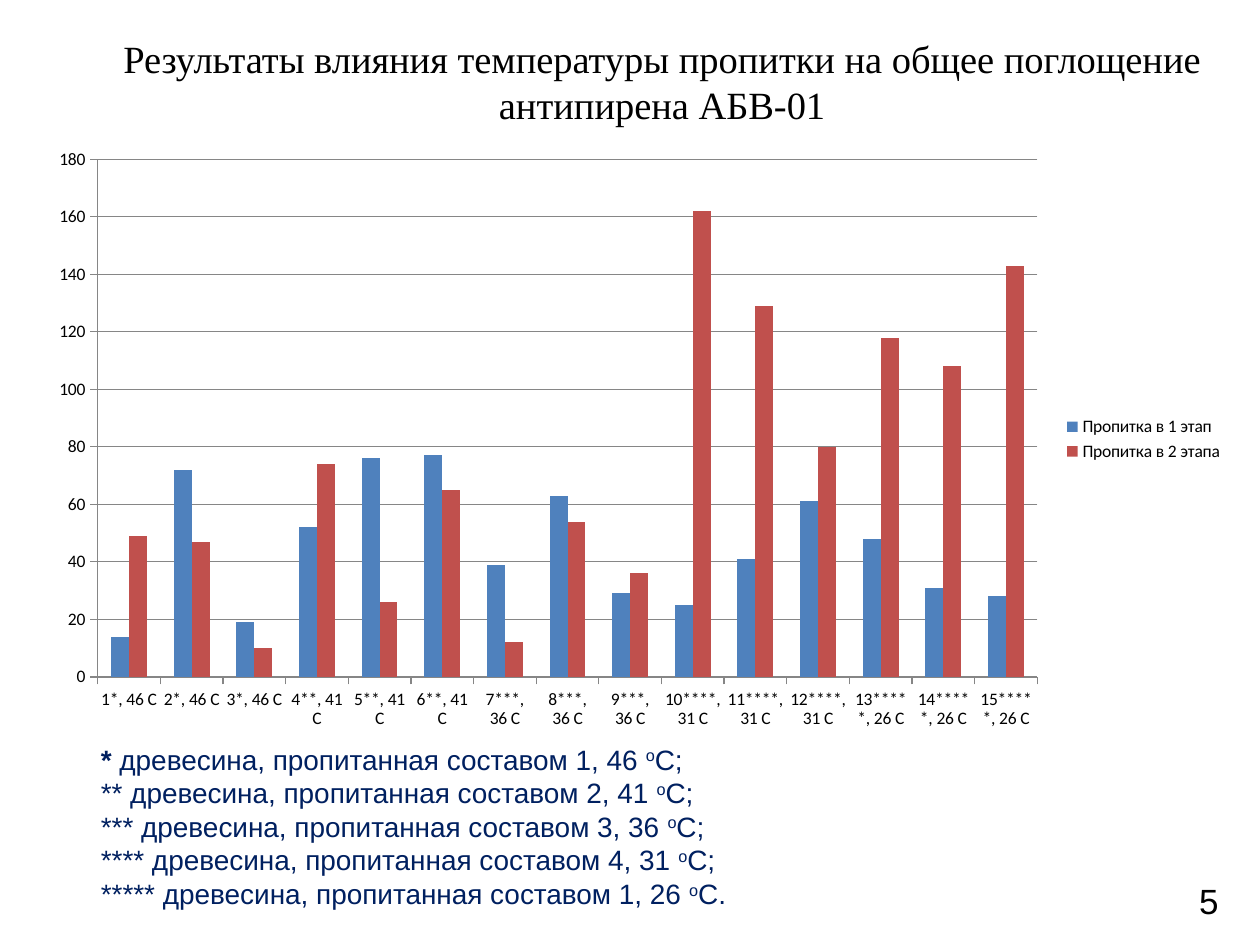
import pptx
import pptx.chart.data
import pptx.dml.color
import pptx.enum.chart
import pptx.enum.text
import pptx.oxml
import pptx.oxml.ns
import pptx.util

Inches, Pt = pptx.util.Inches, pptx.util.Pt
RGBColor = pptx.dml.color.RGBColor
PP_ALIGN = pptx.enum.text.PP_ALIGN
MSO_ANCHOR = pptx.enum.text.MSO_ANCHOR
XL = pptx.enum.chart

BLACK = RGBColor(0x00, 0x00, 0x00)
NAVY = RGBColor(0x00, 0x20, 0x60)
BLUE = RGBColor(0x4F, 0x81, 0xBD)
RED = RGBColor(0xC0, 0x50, 0x4D)
GREY = RGBColor(0x86, 0x86, 0x86)

TITLE = "Результаты влияния температуры пропитки на общее поглощение антипирена АБВ-01"
TEMPERATURES = [46, 41, 36, 31, 26]
COMPOSITIONS = [1, 2, 3, 4, 1]
SAMPLES_PER_GROUP = 3
SERIES = [
    ("Пропитка в 1 этап", BLUE,
     [14, 72, 19, 52, 76, 77, 39, 63, 29, 25, 41, 61, 48, 31, 28]),
    ("Пропитка в 2 этапа", RED,
     [49, 47, 10, 74, 26, 65, 12, 54, 36, 162, 129, 80, 118, 108, 143]),
]


def set_font(font, color, **values):
    for name, value in values.items():
        setattr(font, name, value)
    font.color.rgb = color


def place(s, box):
    for name, value in zip(("left", "top", "width", "height"), box):
        setattr(s, name, Inches(value))


def add_title(slide, box):
    s = slide.shapes.title
    place(s, box)
    tf = s.text_frame
    tf.text = TITLE
    tf.auto_size = pptx.enum.text.MSO_AUTO_SIZE.NONE
    tf.vertical_anchor = MSO_ANCHOR.TOP
    p = tf.paragraphs[0]
    p.alignment = PP_ALIGN.CENTER
    set_font(p.runs[0].font, BLACK, name="Times New Roman", size=Pt(22))


def add_page_number(slide, box):
    s = slide.shapes.add_textbox(*map(Inches, box))
    tf = s.text_frame
    tf.word_wrap = True
    tf.vertical_anchor = MSO_ANCHOR.MIDDLE
    p = tf.paragraphs[0]
    p.alignment = PP_ALIGN.RIGHT
    r = p.add_run()
    r.text = "5"
    set_font(r.font, BLACK, name="Arial", size=Pt(20))


def add_absorption_chart(slide, box):
    data = pptx.chart.data.CategoryChartData()
    data.categories = [
        f"{group * SAMPLES_PER_GROUP + i + 1}{'*' * (group + 1)}, {temperature} С"
        for group, temperature in enumerate(TEMPERATURES)
        for i in range(SAMPLES_PER_GROUP)
    ]
    for name, _, values in SERIES:
        data.add_series(name, values)
    chart = slide.shapes.add_chart(
        XL.XL_CHART_TYPE.COLUMN_CLUSTERED, *map(Inches, box), data).chart
    set_font(chart.font, BLACK, name="Calibri", size=Pt(10))
    chart.has_title = False

    # Legend
    chart.has_legend = True
    chart.legend.position = XL.XL_LEGEND_POSITION.RIGHT
    chart.legend.include_in_layout = False

    # Columns
    plot = chart.plots[0]
    plot.gap_width = 150
    plot.vary_by_categories = False
    for series, (_, color, _) in zip(plot.series, SERIES):
        series.format.fill.solid()
        series.format.fill.fore_color.rgb = color
        series.invert_if_negative = False

    # Axes and gridlines
    value_axis = chart.value_axis
    value_axis.minimum_scale, value_axis.maximum_scale = 0, 180
    value_axis.major_unit = 20
    value_axis.has_major_gridlines = True
    for axis in (chart.category_axis, value_axis):
        axis.major_tick_mark = XL.XL_TICK_MARK.OUTSIDE
    for part in (chart.category_axis, value_axis, value_axis.major_gridlines):
        part.format.line.color.rgb = GREY
        part.format.line.width = Pt(0.75)


def add_footnotes(slide, box):
    s = slide.placeholders[1]
    place(s, box)
    tf = s.text_frame
    tf.auto_size = pptx.enum.text.MSO_AUTO_SIZE.NONE
    last = len(TEMPERATURES) - 1
    for i, (composition, temperature) in enumerate(zip(COMPOSITIONS, TEMPERATURES)):
        p = tf.paragraphs[0] if i == 0 else tf.add_paragraph()
        pPr = p._p.get_or_add_pPr()
        pPr.set("marL", "0")
        pPr.set("indent", "0")
        pPr.append(pptx.oxml.parse_xml(
            f"<a:buNone {pptx.oxml.ns.nsdecls('a')}/>"))
        p.space_before = Pt(0)
        pieces = [
            ("*" * (i + 1) + " ", i == 0, None),
            (f"древесина, пропитанная составом {composition}, {temperature} ", False, None),
            ("о", False, "30000"),
            ("С." if i == last else "С;", False, None),
        ]
        for text, bold, baseline in pieces:
            r = p.add_run()
            r.text = text
            set_font(r.font, NAVY, name="Arial", size=Pt(16), bold=bold)
            if baseline:
                r.font._element.set("baseline", baseline)


def main():
    prs = pptx.Presentation()
    prs.slide_width, prs.slide_height = Inches(10), Inches(7.5)
    slide = prs.slides.add_slide(prs.slide_layouts[1])
    add_title(slide, (0.51, 0.23, 9.49, 0.84))
    add_page_number(slide, (9.17, 6.95, 0.6, 0.4))
    add_absorption_chart(slide, (0.28, 1.09, 9.53, 4.79))
    add_footnotes(slide, (0.7, 5.84, 8.03, 1.48))
    prs.save("out.pptx")


if __name__ == "__main__":
    main()
